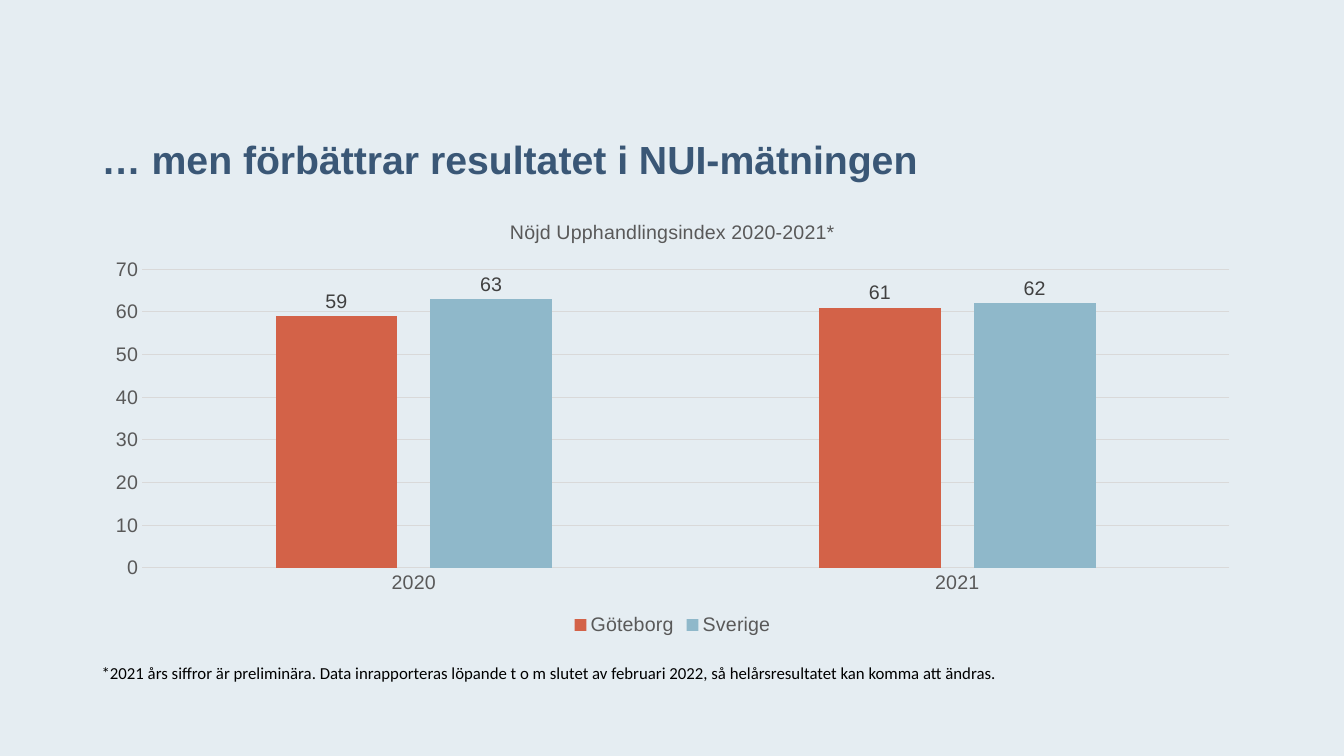
from dataclasses import dataclass

from pptx import Presentation
from pptx.chart.data import CategoryChartData
from pptx.dml.color import RGBColor
from pptx.enum.chart import (
    XL_CHART_TYPE as ChartType,
    XL_LABEL_POSITION as LabelPosition,
    XL_LEGEND_POSITION as LegendPosition,
    XL_TICK_MARK as TickMark,
)
from pptx.enum.text import MSO_ANCHOR as Anchor
from pptx.util import Inches, Pt


@dataclass(frozen=True)
class Theme:
    background: str = "E5EDF2"
    heading: str = "3A5776"
    note: str = "000000"
    axis_text: str = "595959"
    label_text: str = "404040"
    grid: str = "D9D9D9"
    gothenburg: str = "D36248"
    sweden: str = "8FB8CA"
    main_font: str = "Arial"
    note_font: str = "Calibri"
    heading_size: float = 28
    chart_size: float = 14
    note_size: float = 12
    grid_width: float = 0.75


@dataclass(frozen=True)
class Region:
    name: str
    scores: tuple[int, ...]
    color: str


THEME = Theme()
YEARS = ("2020", "2021")
REGIONS = (
    Region("Göteborg", (59, 61), THEME.gothenburg),
    Region("Sverige", (63, 62), THEME.sweden),
)


def style_font(font, color: str, size: float = THEME.chart_size,
               name: str = THEME.main_font, bold: bool = False) -> None:
    font.name = name
    font.size = Pt(size)
    font.bold = bold
    font.color.rgb = RGBColor.from_string(color)


def style_line(line) -> None:
    line.color.rgb = RGBColor.from_string(THEME.grid)
    line.width = Pt(THEME.grid_width)


def add_text(page, text: str, *, left: float, top: float, width: float,
             height: float, color: str, size: float, font: str,
             bold: bool = False, anchor=Anchor.TOP,
             line_points: float | None = None) -> None:
    box = page.shapes.add_textbox(
        Inches(left), Inches(top), Inches(width), Inches(height))
    frame = box.text_frame
    frame.word_wrap = True
    frame.vertical_anchor = anchor
    para = frame.paragraphs[0]
    if line_points is not None:
        para.line_spacing = Pt(line_points)
    span = para.add_run()
    span.text = text
    style_font(span.font, color, size, font, bold)


def add_index_chart(page) -> None:
    data = CategoryChartData()
    data.categories = YEARS
    for region in REGIONS:
        data.add_series(region.name, region.scores)
    chart = page.shapes.add_chart(
        ChartType.COLUMN_CLUSTERED,
        Inches(0.92), Inches(2), Inches(11.5), Inches(4.35), data).chart
    style_font(chart.font, THEME.axis_text)

    # Chart title and legend
    chart.has_title = True
    title = chart.chart_title
    title.include_in_layout = False
    para = title.text_frame.paragraphs[0]
    span = para.add_run()
    span.text = "Nöjd Upphandlingsindex 2020-2021*"
    style_font(span.font, THEME.axis_text)
    chart.has_legend = True
    chart.legend.position = LegendPosition.BOTTOM
    chart.legend.include_in_layout = False
    style_font(chart.legend.font, THEME.axis_text)

    # Axes
    for axis in (chart.category_axis, chart.value_axis):
        axis.major_tick_mark = TickMark.NONE
        axis.minor_tick_mark = TickMark.NONE
        style_font(axis.tick_labels.font, THEME.axis_text)
    style_line(chart.category_axis.format.line)
    values = chart.value_axis
    values.minimum_scale = 0
    values.format.line.fill.background()
    values.has_major_gridlines = True
    style_line(values.major_gridlines.format.line)

    # Columns and their labels
    plot = chart.plots[0]
    plot.gap_width = 219
    plot.overlap = -27
    plot.vary_by_categories = False
    for region, series in zip(REGIONS, plot.series):
        series.invert_if_negative = False
        series.format.fill.solid()
        series.format.fill.fore_color.rgb = RGBColor.from_string(region.color)
        labels = series.data_labels
        labels.show_value = True
        labels.position = LabelPosition.OUTSIDE_END
        style_font(labels.font, THEME.label_text)


def main() -> None:
    deck = Presentation()
    deck.slide_width = Inches(13.33)
    deck.slide_height = Inches(7.5)
    page = deck.slides.add_slide(deck.slide_layouts[6])
    page.background.fill.solid()
    page.background.fill.fore_color.rgb = RGBColor.from_string(THEME.background)

    # Heading
    add_text(page, "… men förbättrar resultatet i NUI-mätningen",
             left=0.91, top=0.41, width=11.5, height=1.45,
             color=THEME.heading, size=THEME.heading_size,
             font=THEME.main_font, bold=True, anchor=Anchor.BOTTOM,
             line_points=31)

    add_index_chart(page)

    # Footnote
    add_text(page,
             "*2021 års siffror är preliminära. Data inrapporteras löpande "
             "t o m slutet av februari 2022, så helårsresultatet kan komma "
             "att ändras.",
             left=0.91, top=6.53, width=9.46, height=0.3,
             color=THEME.note, size=THEME.note_size, font=THEME.note_font)

    deck.save("out.pptx")


if __name__ == "__main__":
    main()
